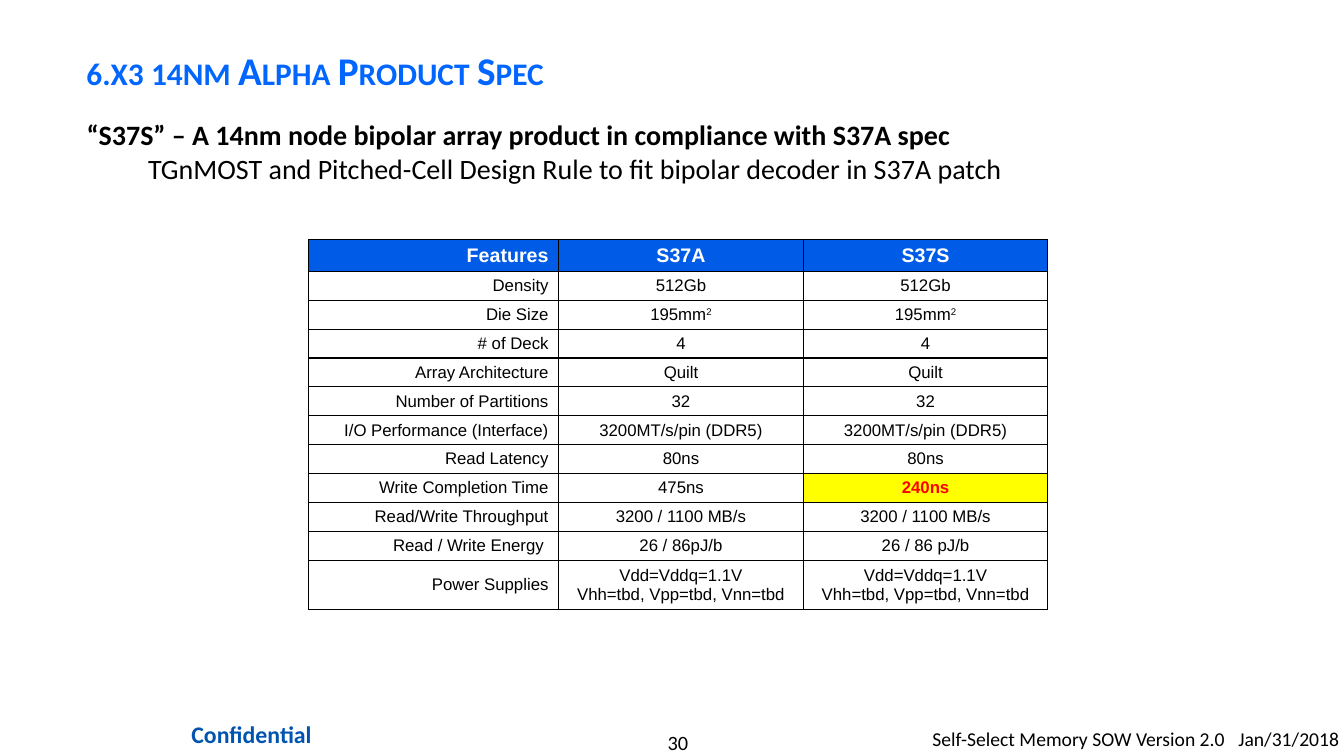
from lxml.etree import SubElement
from pptx import Presentation
from pptx.dml.color import RGBColor
from pptx.enum.text import MSO_ANCHOR as Anchor, PP_ALIGN as Align
from pptx.oxml.ns import qn
from pptx.util import Pt

FEATURES = [
    ("Features", "S37A", "S37S"),
    ("Density", "512Gb", "512Gb"),
    ("Die Size", "195mm^2", "195mm^2"),
    ("# of Deck", "4", "4"),
    ("Array Architecture", "Quilt", "Quilt"),
    ("Number of Partitions", "32", "32"),
    ("I/O Performance (Interface)", "3200MT/s/pin (DDR5)", "3200MT/s/pin (DDR5)"),
    ("Read Latency", "80ns", "80ns"),
    ("Write Completion Time", "475ns", "240ns"),
    ("Read/Write Throughput", "3200 / 1100 MB/s", "3200 / 1100 MB/s"),
    ("Read / Write Energy ", "26 / 86pJ/b", "26 / 86 pJ/b"),
    ("Power Supplies",) + ("Vdd=Vddq=1.1V\nVhh=tbd, Vpp=tbd, Vnn=tbd",) * 2,
]
COLUMN_WIDTHS = (178.6, 174.7, 174.7)
HEADER_HEIGHT, ROW_HEIGHT, LAST_HEIGHT = 22.9, 20.65, 34.4


def color(value):
    """Turn a hex string into a colour."""
    return RGBColor.from_string(value)


def style(span, size, tint="000000", bold=False, font="Calibri"):
    """Format one run of text."""
    span.font.name = font
    span.font.size = Pt(size)
    span.font.bold = bold
    span.font.color.rgb = color(tint)


def add_text(page, text, place, size, tint="000000", bold=False,
             align=Align.LEFT, anchor=Anchor.TOP, inset=(7.2, 3.6)):
    """Add a wrapped text box and return its text frame."""
    box = page.shapes.add_textbox(*map(Pt, place))
    frame = box.text_frame
    frame.word_wrap = True
    frame.vertical_anchor = anchor
    frame.margin_left = frame.margin_right = Pt(inset[0])
    frame.margin_top = frame.margin_bottom = Pt(inset[1])
    frame.text = text
    for para in frame.paragraphs:
        para.alignment = align
        for span in para.runs:
            style(span, size, tint, bold)
    return frame


def add_title(page, text):
    """Add the slide title in small capitals."""
    frame = add_text(page, text, (54.7, 15.1, 796.3, 66.2), 28, "0066FF", True,
                     anchor=Anchor.MIDDLE)
    para = frame.paragraphs[0]
    para.line_spacing = 1.1
    para.runs[0].font._element.set("cap", "small")


def add_summary(page, heading, detail):
    """Add the bold heading with its indented detail line."""
    frame = add_text(page, f"{heading}\n{detail}", (54.7, 80.6, 882, 416.2), 20, bold=True)
    para = frame.paragraphs[1]
    para.level = 1
    properties = para._p.get_or_add_pPr()
    properties.set("marL", str(Pt(44)))
    properties.set("indent", "0")
    para.runs[0].font.bold = False


def add_version(page, version, date):
    """Add the version line with the date at a tab stop."""
    frame = add_text(page, f"{version}\t{date}", (666, 515.5, 293.8, 24.5), 14, inset=(0, 3.6))
    properties = frame.paragraphs[0]._p.get_or_add_pPr()
    stops = SubElement(properties, qn("a:tabLst"))
    SubElement(stops, qn("a:tab"), pos=str(Pt(218.5)), algn="l")


def add_borders(cell):
    """Draw a thin black line on every side of a cell."""
    properties = cell._tc.get_or_add_tcPr()
    for side in ("lnL", "lnR", "lnT", "lnB"):
        line = SubElement(properties, qn(f"a:{side}"), w=str(Pt(1)))
        fill = SubElement(line, qn("a:solidFill"))
        SubElement(fill, qn("a:srgbClr"), val="000000")


def fill_cell(cell, text, align, size, tint, bold, back):
    """Write a cell, raising whatever follows a caret."""
    add_borders(cell)
    cell.fill.solid()
    cell.fill.fore_color.rgb = color(back)
    cell.vertical_anchor = Anchor.MIDDLE
    cell.margin_top = cell.margin_bottom = Pt(3.1)
    base, _, power = text.partition("^")
    cell.text_frame.text = base
    if power:
        raised = cell.text_frame.paragraphs[0].add_run()
        raised.text = power
        raised.font._element.set("baseline", "30000")
    for para in cell.text_frame.paragraphs:
        para.alignment = align
        for span in para.runs:
            style(span, size, tint, bold, "Arial")


def add_features(page):
    """Add the feature comparison table."""
    last = len(FEATURES) - 1
    heights = [HEADER_HEIGHT] + [ROW_HEIGHT] * (last - 1) + [LAST_HEIGHT]
    frame = page.shapes.add_table(len(FEATURES), len(COLUMN_WIDTHS), Pt(220.5), Pt(170.8),
                                  Pt(sum(COLUMN_WIDTHS)), Pt(sum(heights)))
    table = frame.table
    for column, width in zip(table.columns, COLUMN_WIDTHS):
        column.width = Pt(width)
    for row, height in zip(table.rows, heights):
        row.height = Pt(height)
    for i, texts in enumerate(FEATURES):
        for j, text in enumerate(texts):
            look = (12, "000000", False, "FFFFFF")
            if i == 0:
                look = (14, "FFFFFF", True, "005CE7")
            elif text == "240ns":
                look = (12, "FF0000", True, "FFFF00")
            align = Align.CENTER if j else Align.RIGHT
            fill_cell(table.cell(i, j), text, align, *look)


def main():
    """Build the product specification slide."""
    deck = Presentation()
    deck.slide_width, deck.slide_height = Pt(960), Pt(540)
    page = deck.slides.add_slide(deck.slide_layouts[6])
    add_text(page, "30", (400.3, 521.3, 167.8, 17.3), 14.5, align=Align.CENTER, inset=(0, 0))
    add_text(page, "Confidential", (111.6, 509.8, 136.1, 29.5), 17, "0054B0", True,
             Align.CENTER, inset=(8.6, 4.3))
    add_version(page, "Self-Select Memory SOW Version 2.0", "Jan/31/2018")
    add_title(page, "6.x3 14nm Alpha Product Spec")
    add_summary(page, "“S37S” – A 14nm node bipolar array product in compliance with S37A spec",
                "TGnMOST and Pitched-Cell Design Rule to fit bipolar decoder in S37A patch")
    add_features(page)
    deck.save("out.pptx")


if __name__ == "__main__":
    main()
